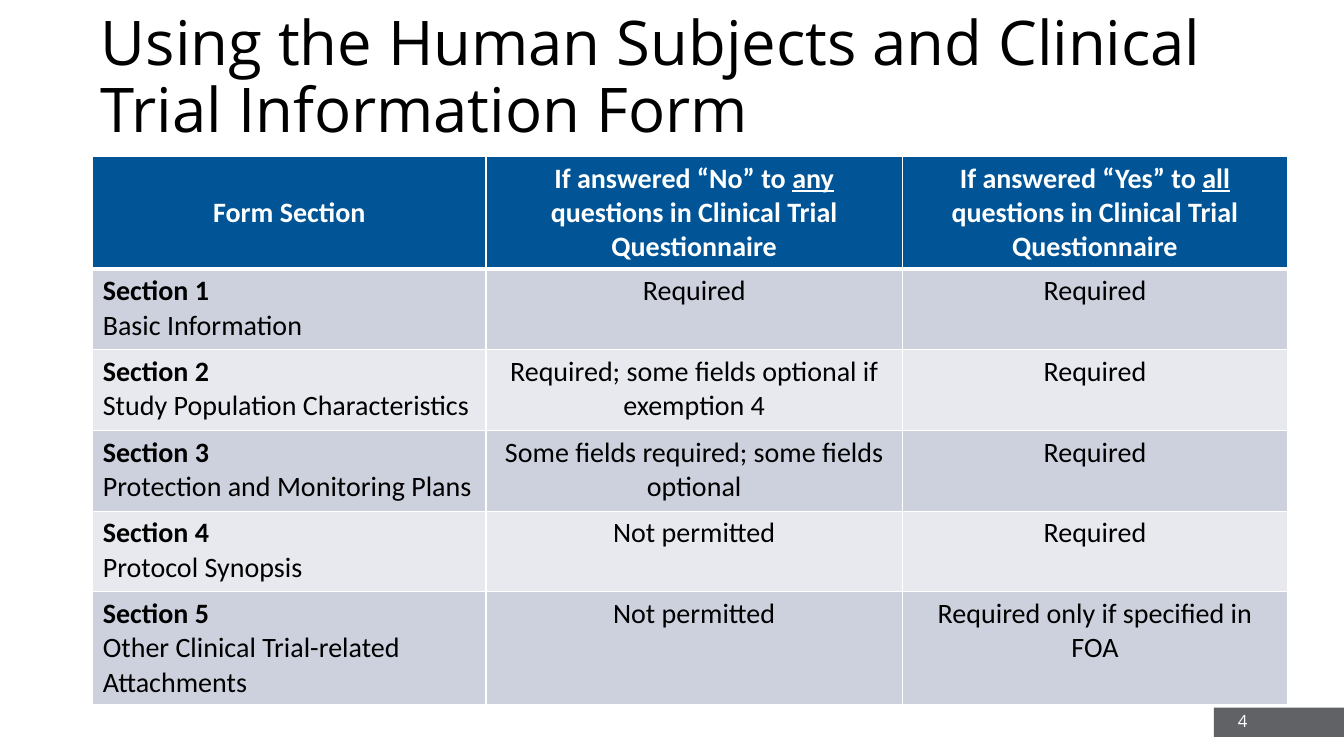
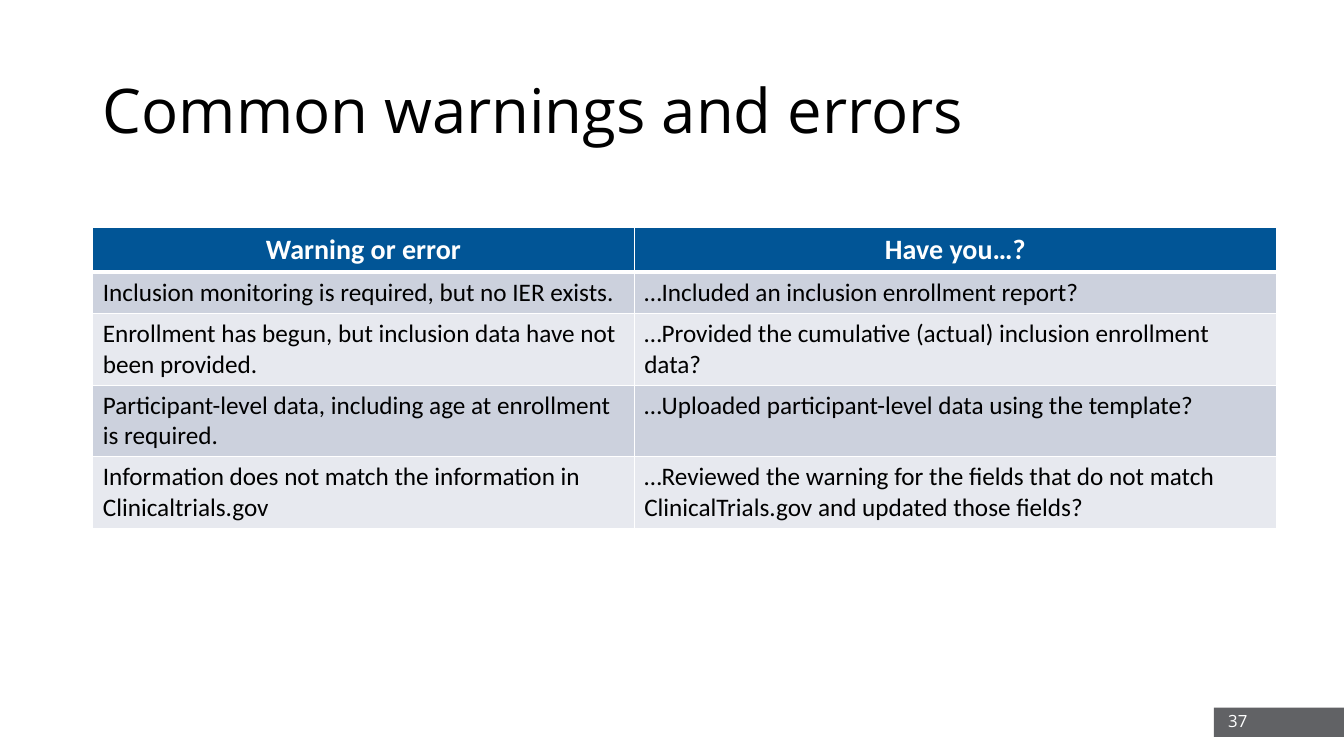
from dataclasses import dataclass

import lxml.etree
import pptx
import pptx.dml.color
import pptx.enum.shapes
import pptx.enum.text
import pptx.oxml.ns
import pptx.util

PX = 9144
SLIDE_W, SLIDE_H = 1333, 750
COLORS = {
    "text": "000000",
    "white": "FFFFFF",
    "header": "015596",
    "odd": "CCD1DD",
    "even": "E7E9EF",
    "band": "616265",
}
TITLE_FONT, TABLE_FONT = "Open Sans", "Calibri"
HEADER_SIZE = 20
ALIGN = pptx.enum.text.PP_ALIGN
ANCHOR = pptx.enum.text.MSO_ANCHOR


@dataclass(frozen=True)
class TableSlide:
    title: str
    title_left: int
    title_top: int
    number: int
    top: int
    widths: list[int]
    heights: list[int]
    body_size: int
    body_aligns: list[ALIGN]
    rows: list[list[str]]


SLIDES = [
    TableSlide(
        "Using the Human Subjects and Clinical Trial Information Form",
        90, 6, 4, 155, [390, 413, 382], [111, 80, 80, 80, 80, 109], 20,
        [ALIGN.LEFT, ALIGN.CENTER, ALIGN.CENTER],
        [
            ["Form Section",
             "If answered “No” to _any_ questions in Clinical Trial Questionnaire",
             "If answered “Yes” to _all_ questions in Clinical Trial Questionnaire"],
            ["Section 1\nBasic Information", "Required", "Required"],
            ["Section 2\nStudy Population Characteristics",
             "Required; some fields optional if exemption 4", "Required"],
            ["Section 3\nProtection and Monitoring Plans",
             "Some fields required; some fields optional", "Required"],
            ["Section 4\nProtocol Synopsis", "Not permitted", "Required"],
            ["Section 5\nOther Clinical Trial-related Attachments",
             "Not permitted", "Required only if specified in FOA"],
        ],
    ),
    TableSlide(
        "Common warnings and errors",
        92, 40, 37, 226, [537, 637], [41, 41, 71, 71, 71], 18,
        [ALIGN.LEFT, ALIGN.LEFT],
        [
            ["Warning or error", "Have you…?"],
            ["Inclusion monitoring is required, but no IER exists.",
             "…Included an inclusion enrollment report?"],
            ["Enrollment has begun, but inclusion data have not been provided.",
             "…Provided the cumulative (actual) inclusion enrollment data?"],
            ["Participant-level data, including age at enrollment is required.",
             "…Uploaded participant-level data using the template?"],
            ["Information does not match the information in Clinicaltrials.gov",
             "…Reviewed the warning for the fields that do not match "
             "ClinicalTrials.gov and updated those fields?"],
        ],
    ),
]


def px(*lengths: int) -> list[pptx.util.Emu]:
    return [pptx.util.Emu(n * PX) for n in lengths]


def rgb(name: str) -> pptx.dml.color.RGBColor:
    return pptx.dml.color.RGBColor.from_string(COLORS[name])


def style(font, name: str, size: int, color: str, bold: bool = False) -> None:
    font.name = name
    font.size = pptx.util.Pt(size)
    font.bold = bold
    font.color.rgb = rgb(color)


def add_title(s, spec_row: TableSlide) -> None:
    title = s.shapes.title
    title.left, title.top, title.width, title.height = px(
        spec_row.title_left, spec_row.title_top, 1150, 145)
    tf = title.text_frame
    tf.text = spec_row.title
    tf.word_wrap = True
    tf.auto_size = pptx.enum.text.MSO_AUTO_SIZE.NONE
    tf.vertical_anchor = ANCHOR.MIDDLE
    p = tf.paragraphs[0]
    p.alignment = ALIGN.LEFT
    p.line_spacing = 0.9
    style(p.runs[0].font, TITLE_FONT, 44, "text")


def add_band(s) -> None:
    band = s.shapes.add_shape(
        pptx.enum.shapes.MSO_SHAPE.RECTANGLE, *px(1204, 702, 129, 29))
    band.shadow.inherit = False
    band.fill.solid()
    band.fill.fore_color.rgb = rgb("band")
    band.line.fill.background()


def add_number(s, number: int) -> None:
    tf = s.shapes.add_textbox(*px(947, 695, 300, 40)).text_frame
    tf.word_wrap = True
    tf.vertical_anchor = ANCHOR.MIDDLE
    tf.text = str(number)
    p = tf.paragraphs[0]
    p.alignment = ALIGN.RIGHT
    style(p.runs[0].font, TITLE_FONT, 12, "white")


def set_borders(cell, top: int, bottom: int) -> None:
    qn = pptx.oxml.ns.qn
    tc_pr = cell._tc.get_or_add_tcPr()
    for side, points in (("L", 1), ("R", 1), ("T", top), ("B", bottom)):
        ln = lxml.etree.SubElement(
            tc_pr, qn(f"a:ln{side}"), w=str(pptx.util.Pt(points)))
        fill = lxml.etree.SubElement(ln, qn("a:solidFill"))
        lxml.etree.SubElement(fill, qn("a:srgbClr"), val=COLORS["white"])


def fill_cell(cell, text: str, size: int, color: str, align: ALIGN,
              header: bool) -> None:
    tf = cell.text_frame
    lines = text.split("\n")
    for i, line in enumerate(lines):
        p = tf.paragraphs[0] if i == 0 else tf.add_paragraph()
        p.alignment = align
        bold = header or (len(lines) > 1 and i == 0)
        for j, part in enumerate(line.split("_")):
            r = p.add_run()
            r.text = part
            style(r.font, TABLE_FONT, size, color, bold)
            if j % 2:
                r.font.underline = True


def add_table(s, content: TableSlide) -> None:
    frame = s.shapes.add_table(
        len(content.rows), len(content.widths),
        *px(92, content.top, sum(content.widths), sum(content.heights)))
    table = frame.table
    for column, width in zip(table.columns, content.widths):
        column.width = px(width)[0]
    for i, (texts, height) in enumerate(zip(content.rows, content.heights)):
        table.rows[i].height = px(height)[0]
        header = i == 0
        fill = "header" if header else ("odd" if i % 2 else "even")
        for j, text in enumerate(texts):
            cell = table.cell(i, j)
            set_borders(cell, 3 if i == 1 else 1, 3 if header else 1)
            cell.fill.solid()
            cell.fill.fore_color.rgb = rgb(fill)
            cell.vertical_anchor = ANCHOR.MIDDLE if header else ANCHOR.TOP
            fill_cell(
                cell, text,
                HEADER_SIZE if header else content.body_size,
                "white" if header else "text",
                ALIGN.CENTER if header else content.body_aligns[j],
                header)


def main() -> None:
    prs = pptx.Presentation()
    prs.slide_width, prs.slide_height = px(SLIDE_W, SLIDE_H)
    for content in SLIDES:
        s = prs.slides.add_slide(prs.slide_layouts[5])
        add_band(s)
        add_title(s, content)
        add_table(s, content)
        add_number(s, content.number)
    prs.save("out.pptx")


if __name__ == "__main__":
    main()
